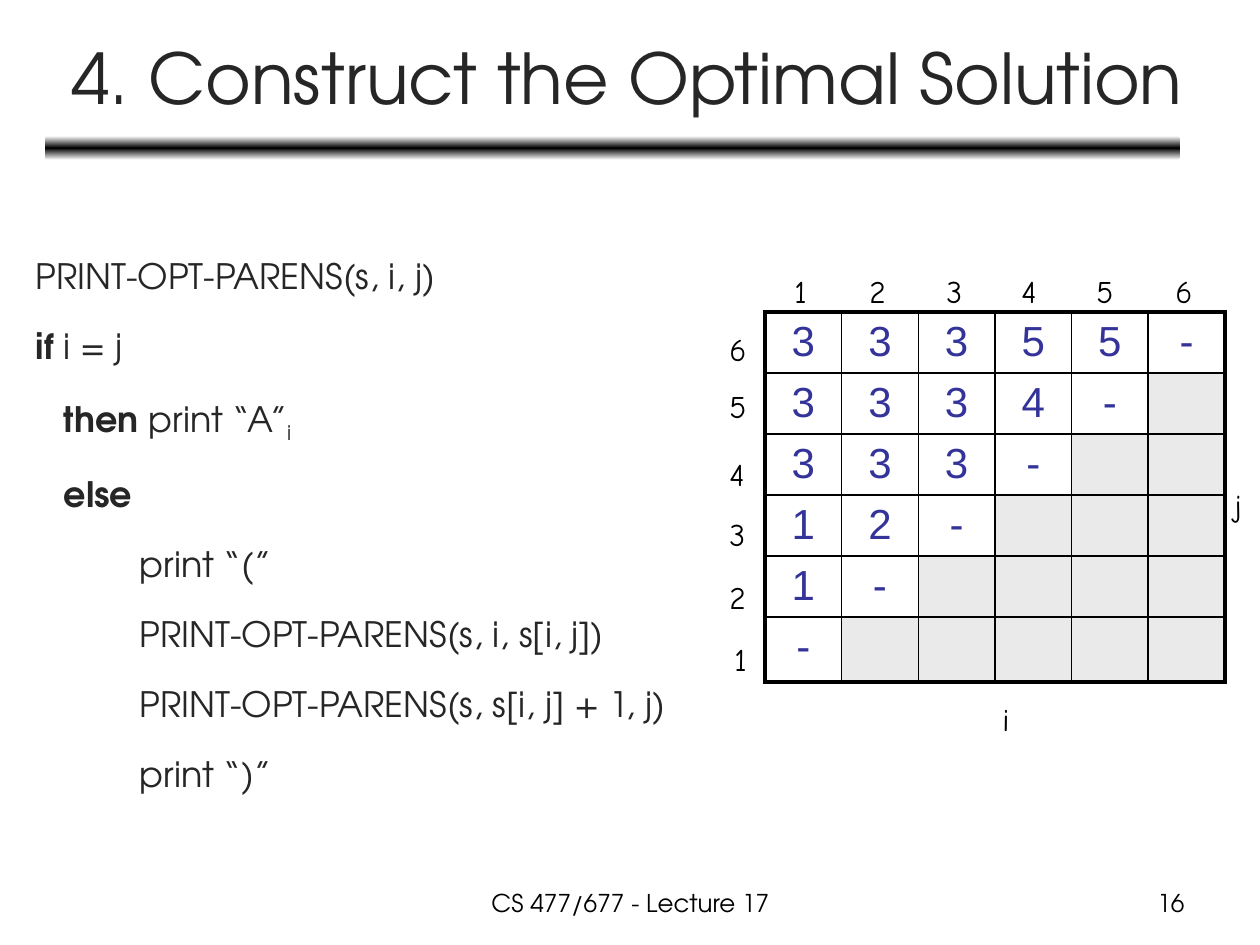
"""Build the lecture slide on constructing the optimal parenthesization."""
import dataclasses

import lxml.etree
import pptx
import pptx.dml.color
import pptx.enum.shapes
import pptx.enum.text
import pptx.oxml.ns
import pptx.util

ALIGN = pptx.enum.text.PP_ALIGN
ANCHOR = pptx.enum.text.MSO_ANCHOR


@dataclasses.dataclass(frozen=True)
class Theme:
    main_font: str = "TeX Gyre Adventor"
    label_font: str = "Comic Neue"
    cell_font: str = "Arial"
    ink: str = "262626"
    black: str = "000000"
    white: str = "FFFFFF"
    value: str = "333399"
    unused: str = "EAEAEA"
    title_size: int = 40
    code_size: int = 20
    cell_size: int = 24
    label_size: int = 18
    footer_size: int = 14
    thin: float = 1
    thick: float = 2.25


THEME = Theme()

TITLE = "4. Construct the Optimal Solution"
FOOTER = "CS 477/677 - Lecture 17"
PAGE = "16"

PLAIN, BOLD, SUB = {}, {"bold": True}, {"baseline": -25}
CODE = [
    (0, [("PRINT-OPT-PARENS(s, i, j)", PLAIN)]),
    (0, [("if ", BOLD), ("i = j", PLAIN)]),
    (28, [("then", BOLD), (" print “A”", PLAIN), ("i", SUB)]),
    (28, [("else", BOLD)]),
    (104, [("print “(”", PLAIN)]),
    (104, [("PRINT-OPT-PARENS(s, i, s[i, j])", PLAIN)]),
    (104, [("PRINT-OPT-PARENS(s, s[i, j] + 1, j)", PLAIN)]),
    (104, [("print “)”", PLAIN)]),
]

SPLITS = ["33355-", "3334-", "333-", "12-", "1-", "-"]
ROW_HEIGHTS = [61, 61, 61, 61, 61, 65]
TABLE_BOX = (765, 312, 460, sum(ROW_HEIGHTS))

COLUMN_LABELS = [("1", 782), ("2", 857), ("3", 934), ("4", 1009), ("5", 1084), ("6", 1163)]
ROW_LABELS = [("6", 324), ("5", 381), ("4", 449), ("3", 509), ("2", 572), ("1", 634)]
AXIS_LABELS = [("i", 990, 694, 34), ("j", 1222, 480, 38)]
COLUMN_LABEL_TOP = 266
ROW_LABEL_RIGHT = 761
LABEL_HEIGHT = 50
LABEL_WIDTHS = {"1": 39}
LABEL_WIDTH = 44


def px(length):
    return pptx.util.Emu(round(length * 914400 / 126))


def rgb(color):
    return pptx.dml.color.RGBColor.from_string(color)


def add_text(paragraph, text, *, size, font=THEME.main_font, color=THEME.black,
             bold=False, baseline=0, align=ALIGN.LEFT):
    paragraph.alignment = align
    run = paragraph.add_run()
    run.text = text
    run.font.size = pptx.util.Pt(size)
    run.font.name = font
    run.font.bold = bold
    run.font.color.rgb = rgb(color)
    if baseline:
        run.font._element.set("baseline", str(baseline * 1000))


def add_child(parent, tag, **attributes):
    return lxml.etree.SubElement(parent, pptx.oxml.ns.qn(tag), **attributes)


def place(shape, left, top, width, height):
    shape.left, shape.top = px(left), px(top)
    shape.width, shape.height = px(width), px(height)


def add_label(slide, text, box, *, wrap=False, **format):
    label = slide.shapes.add_textbox(*map(px, box))
    label.text_frame.word_wrap = wrap
    add_text(label.text_frame.paragraphs[0], text, **format)


def add_rule(slide):
    rule = slide.shapes.add_shape(
        pptx.enum.shapes.MSO_SHAPE.ROUNDED_RECTANGLE, *map(px, (45, 136, 1135, 24)))
    rule.shadow.inherit = False
    rule.line.fill.background()
    rule.fill.gradient()
    rule.fill.gradient_angle = 270
    stops = rule.fill._xPr.find(pptx.oxml.ns.qn("a:gradFill")).find(pptx.oxml.ns.qn("a:gsLst"))
    for stop in list(stops):
        stops.remove(stop)
    for position, color in [(0, THEME.white), (50, THEME.black), (100, THEME.white)]:
        stop = add_child(stops, "a:gs", pos=str(position * 1000))
        add_child(stop, "a:srgbClr", val=color)


def add_title(slide):
    title = slide.shapes.title
    place(title, 47, 14, 1160, 125)
    title.text_frame.auto_size = pptx.enum.text.MSO_AUTO_SIZE.NONE
    title.text_frame.vertical_anchor = ANCHOR.MIDDLE
    add_text(title.text_frame.paragraphs[0], TITLE, size=THEME.title_size,
             color=THEME.ink, align=ALIGN.CENTER)


def add_code(slide):
    code = slide.placeholders[1]
    place(code, 23, 227, 1008, 659)
    frame = code.text_frame
    frame.auto_size = pptx.enum.text.MSO_AUTO_SIZE.NONE
    frame.vertical_anchor = ANCHOR.TOP
    for number, (indent, parts) in enumerate(CODE):
        line = frame.add_paragraph() if number else frame.paragraphs[0]
        line.line_spacing = 1.5
        line.space_before = pptx.util.Pt(4)
        properties = line._p.get_or_add_pPr()
        properties.set("marL", str(px(indent)))
        properties.set("indent", "0")
        add_child(properties, "a:buNone")
        for text, format in parts:
            add_text(line, text, size=THEME.code_size, color=THEME.ink, **format)


def add_borders(cell, outer_sides):
    properties = cell._tc.get_or_add_tcPr()
    for side in "LRTB":
        width = THEME.thick if side in outer_sides else THEME.thin
        border = add_child(properties, f"a:ln{side}", w=str(pptx.util.Pt(width)))
        add_child(add_child(border, "a:solidFill"), "a:srgbClr", val=THEME.black)


def add_splits(slide):
    count = len(SPLITS)
    last = count - 1
    table = slide.shapes.add_table(count, count, *map(px, TABLE_BOX)).table
    table.first_row = table.horz_banding = False
    for column in table.columns:
        column.width = px(TABLE_BOX[2] / count)
    for r, values in enumerate(SPLITS):
        table.rows[r].height = px(ROW_HEIGHTS[r])
        for c in range(count):
            cell = table.cell(r, c)
            edges = {"L": c == 0, "R": c == last, "T": r == 0, "B": r == last}
            add_borders(cell, [side for side, outer in edges.items() if outer])
            if c < len(values):
                cell.fill.background()
                add_text(cell.text_frame.paragraphs[0], values[c], size=THEME.cell_size,
                         font=THEME.cell_font, color=THEME.value, align=ALIGN.CENTER)
            else:
                cell.fill.solid()
                cell.fill.fore_color.rgb = rgb(THEME.unused)


def add_indices(slide):
    labels = list(AXIS_LABELS)
    for text, left in COLUMN_LABELS:
        labels.append((text, left, COLUMN_LABEL_TOP, LABEL_WIDTHS.get(text, LABEL_WIDTH)))
    for text, top in ROW_LABELS:
        width = LABEL_WIDTHS.get(text, LABEL_WIDTH)
        labels.append((text, ROW_LABEL_RIGHT - width, top, width))
    for text, left, top, width in labels:
        add_label(slide, text, (left, top, width, LABEL_HEIGHT),
                  size=THEME.label_size, font=THEME.label_font)


def main():
    deck = pptx.Presentation()
    deck.slide_width, deck.slide_height = px(1260), px(945)
    slide = deck.slides.add_slide(deck.slide_layouts[1])
    add_rule(slide)
    add_title(slide)
    add_code(slide)
    add_splits(slide)
    add_indices(slide)
    add_label(slide, FOOTER, (431, 882, 399, 44), wrap=True,
              size=THEME.footer_size, align=ALIGN.CENTER)
    add_label(slide, PAGE, (903, 882, 294, 44), wrap=True,
              size=THEME.footer_size, align=ALIGN.RIGHT)
    deck.save("out.pptx")


if __name__ == "__main__":
    main()
